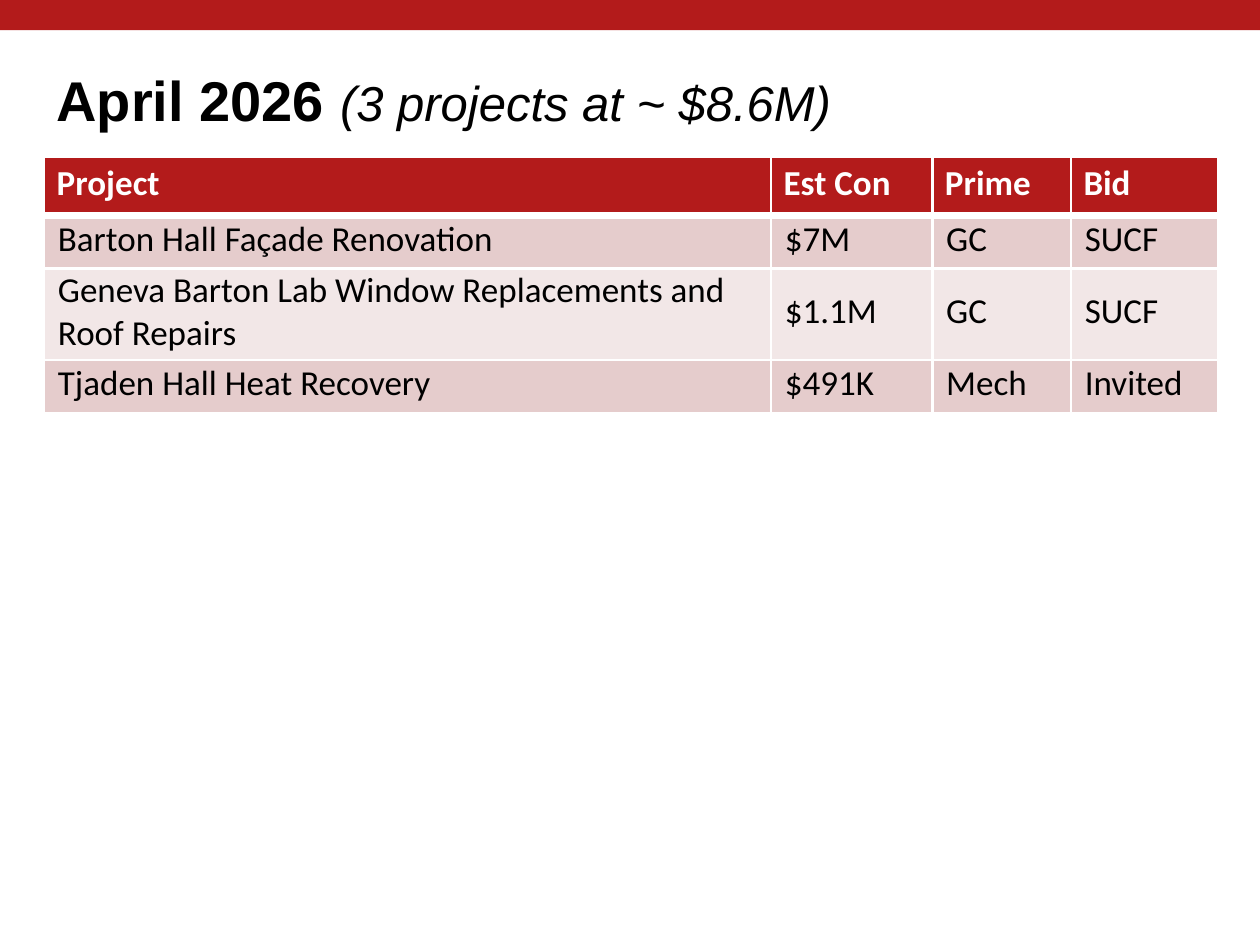
from dataclasses import dataclass

from lxml import etree
from pptx import Presentation, util as u
from pptx.dml.color import RGBColor
from pptx.enum import shapes, text
from pptx.oxml.ns import qn

RED, WHITE, BLACK = "B31B1B", "FFFFFF", "000000"
BANDS = ("E5CCCC", "F2E7E7")
THIN, THICK = 1.64, 4.93


@dataclass
class Project:
    name: str
    estimate: str
    prime: str
    bid: str
    height: float = 0.42


@dataclass
class CellStyle:
    fill: str
    color: str
    bold: bool
    top: float = THIN
    bottom: float = THIN
    indent: float = 0
    layout: dict | None = None


HEADINGS = ("Project", "Est Con", "Prime", "Bid")
COLUMN_WIDTHS = (5.77, 1.28, 1.1, 1.17)
HEADER_HEIGHT = 0.47
PROJECTS = (
    Project("Barton Hall Façade Renovation", "$7M", "GC", "SUCF"),
    Project("Geneva Barton Lab Window Replacements and Roof Repairs",
            "$1.1M", "GC", "SUCF", 0.72),
    Project("Tjaden Hall Heat Recovery", "$491K", "Mech", "Invited"),
)
BODY_LAYOUT = {
    "vertical_anchor": text.MSO_ANCHOR.MIDDLE,
    "margin_left": u.Inches(0.01),
    "margin_top": u.Inches(0.01),
    "margin_right": u.Inches(0.01),
    "margin_bottom": u.Inches(0.05),
}


def rgb(value: str) -> RGBColor:
    return RGBColor.from_string(value)


def apply(target, values: dict) -> None:
    for attribute, value in values.items():
        setattr(target, attribute, value)


def add_run(paragraph, words: str, color: str, **font_format) -> None:
    run = paragraph.add_run()
    run.text = words
    apply(run.font, font_format)
    run.font.color.rgb = rgb(color)


def add_border(cell, side: str, width: float) -> None:
    line = etree.SubElement(cell._tc.get_or_add_tcPr(), qn(f"a:ln{side}"),
                            w=str(int(u.Pt(width))))
    solid = etree.SubElement(line, qn("a:solidFill"))
    etree.SubElement(solid, qn("a:srgbClr"), val=WHITE)


def write_cell(cell, words: str, style: CellStyle) -> None:
    apply(cell, style.layout or {})
    for side, width in (("L", THIN), ("R", THIN),
                        ("T", style.top), ("B", style.bottom)):
        add_border(cell, side, width)
    cell.fill.solid()
    cell.fill.fore_color.rgb = rgb(style.fill)
    paragraph = cell.text_frame.paragraphs[0]
    if style.indent:
        paragraph._p.get_or_add_pPr().set("marL", str(int(u.Inches(style.indent))))
    add_run(paragraph, words, style.color,
            name="Calibri", size=u.Pt(20), bold=style.bold)


def write_row(table, row: int, height: float, entries: tuple, style: CellStyle) -> None:
    table.rows[row].height = u.Inches(height)
    for column, words in enumerate(entries):
        write_cell(table.cell(row, column), words, style)


def add_top_band(slide) -> None:
    band = slide.shapes.add_shape(shapes.MSO_SHAPE.RECTANGLE, 0, 0,
                                  u.Inches(10), u.Inches(0.24))
    band.shadow.inherit = False
    band.fill.solid()
    band.fill.fore_color.rgb = rgb(RED)
    band.line.fill.background()


def add_title(slide) -> None:
    title = slide.shapes.add_textbox(u.Inches(0.35), u.Inches(0.41),
                                     u.Inches(9.65), u.Inches(0.75))
    apply(title.text_frame, {"word_wrap": True,
                             "vertical_anchor": text.MSO_ANCHOR.MIDDLE})
    paragraph = title.text_frame.paragraphs[0]
    add_run(paragraph, "April 2026 ", BLACK, name="Arial", size=u.Pt(32), bold=True)
    add_run(paragraph, "(3 projects at ~ $8.6M)", BLACK,
            name="Arial", size=u.Pt(28), italic=True)


def add_project_table(slide) -> None:
    height = HEADER_HEIGHT + sum(project.height for project in PROJECTS)
    table = slide.shapes.add_table(
        len(PROJECTS) + 1, len(HEADINGS), u.Inches(0.35), u.Inches(1.24),
        u.Inches(sum(COLUMN_WIDTHS)), u.Inches(height)).table
    for column, width in zip(table.columns, COLUMN_WIDTHS):
        column.width = u.Inches(width)

    write_row(table, 0, HEADER_HEIGHT, HEADINGS,
              CellStyle(RED, WHITE, True, bottom=THICK))
    for row, project in enumerate(PROJECTS, start=1):
        style = CellStyle(BANDS[(row - 1) % 2], BLACK, False,
                          top=THICK if row == 1 else THIN,
                          indent=0.1, layout=BODY_LAYOUT)
        entries = (project.name, project.estimate, project.prime, project.bid)
        write_row(table, row, project.height, entries, style)


def main() -> None:
    deck = Presentation()
    apply(deck, {"slide_width": u.Inches(10), "slide_height": u.Inches(7.5)})
    slide = deck.slides.add_slide(deck.slide_layouts[6])

    # Heading
    add_top_band(slide)
    add_title(slide)

    # Projects out to bid
    add_project_table(slide)

    deck.save("out.pptx")


if __name__ == "__main__":
    main()
